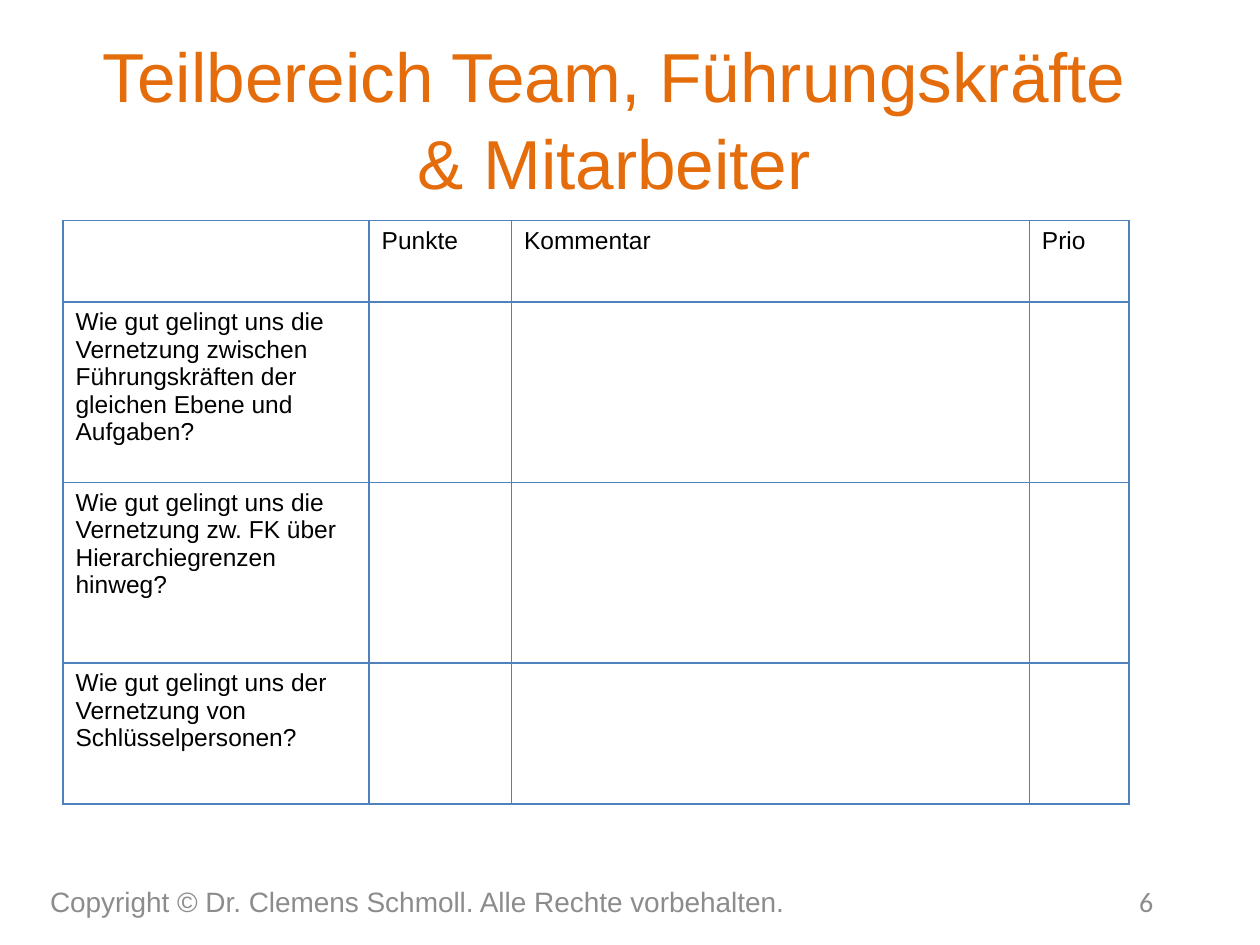
from dataclasses import dataclass

from lxml import etree
from pptx import Presentation
from pptx import util as u
from pptx.dml import color
from pptx.enum import text
from pptx.oxml import ns


@dataclass(frozen=True)
class Theme:
    """Colours, fonts and type sizes of the slide."""
    accent: str = "E46C0A"
    ink: str = "000000"
    muted: str = "8C8C8C"
    rule: str = "4F81BD"
    font: str = "Arial"
    number_font: str = "Calibri"
    title_size: float = 39.6
    cell_size: int = 14
    footer_size: int = 16
    rule_width: int = 1


THEME = Theme()
COLUMN_WIDTHS = (6.17, 2.87, 10.44, 2.01)
ROW_HEIGHTS = (1.64, 3.64, 3.64, 2.84)
HEADINGS = ("", "Punkte", "Kommentar", "Prio")
QUESTIONS = (
    "Wie gut gelingt uns die Vernetzung zwischen Führungskräften der gleichen Ebene und Aufgaben?",
    "Wie gut gelingt uns die Vernetzung zw. FK über Hierarchiegrenzen hinweg?",
    "Wie gut gelingt uns der Vernetzung von Schlüsselpersonen?",
)


def style_text(frame, size, hue, font=THEME.font, align=text.PP_ALIGN.LEFT):
    """Format every run of a text frame."""
    for paragraph in frame.paragraphs:
        paragraph.alignment = align
        for run in paragraph.runs:
            run.font.size = u.Pt(size)
            run.font.name = font
            run.font.bold = False
            run.font.color.rgb = color.RGBColor.from_string(hue)


def add_label(slide, wording, box, size, hue, **style):
    """Add a wrapped, vertically centred text box and return its frame."""
    frame = slide.shapes.add_textbox(*map(u.Cm, box)).text_frame
    frame.word_wrap = True
    frame.vertical_anchor = text.MSO_ANCHOR.MIDDLE
    frame.text = wording
    style_text(frame, size, hue, **style)
    return frame


def rule_cell(cell):
    """Draw a thin line on all four sides of a cell."""
    properties = cell._tc.get_or_add_tcPr()
    for side in ("a:lnL", "a:lnR", "a:lnT", "a:lnB"):
        line = etree.SubElement(properties, ns.qn(side), w=str(u.Pt(THEME.rule_width)))
        fill = etree.SubElement(line, ns.qn("a:solidFill"))
        etree.SubElement(fill, ns.qn("a:srgbClr"), val=THEME.rule)


def add_rating_table(slide, left, top):
    """Add the question table with empty cells for the ratings."""
    rows = [HEADINGS] + [(question, "", "", "") for question in QUESTIONS]
    box = (left, top, sum(COLUMN_WIDTHS), sum(ROW_HEIGHTS))
    table = slide.shapes.add_table(len(rows), len(HEADINGS), *map(u.Cm, box)).table
    table.first_row = table.horz_banding = False
    for column, width in zip(table.columns, COLUMN_WIDTHS):
        column.width = u.Cm(width)
    for row, height, wordings in zip(table.rows, ROW_HEIGHTS, rows):
        row.height = u.Cm(height)
        for cell, wording in zip(row.cells, wordings):
            cell.text = wording
            style_text(cell.text_frame, THEME.cell_size, THEME.ink)
            rule_cell(cell)
            cell.fill.background()


def main():
    """Build the slide and save it."""
    deck = Presentation()
    deck.slide_width, deck.slide_height = u.Cm(25.4), u.Cm(19.05)
    slide = deck.slides.add_slide(deck.slide_layouts[6])
    title = add_label(slide, "Teilbereich Team, Führungskräfte & Mitarbeiter",
                      (1.27, 0.76, 22.23, 3.18), THEME.title_size, THEME.accent,
                      align=text.PP_ALIGN.CENTER)
    title.paragraphs[0].line_spacing = 1.05
    add_rating_table(slide, 1.27, 4.45)
    add_label(slide, "Copyright © Dr. Clemens Schmoll. Alle Rechte vorbehalten.",
              (0.76, 17.65, 16.15, 1.02), THEME.footer_size, THEME.muted)
    add_label(slide, "6", (17.58, 17.65, 5.92, 1.02), THEME.footer_size, THEME.muted,
              font=THEME.number_font, align=text.PP_ALIGN.RIGHT)
    deck.save("out.pptx")


if __name__ == "__main__":
    main()
